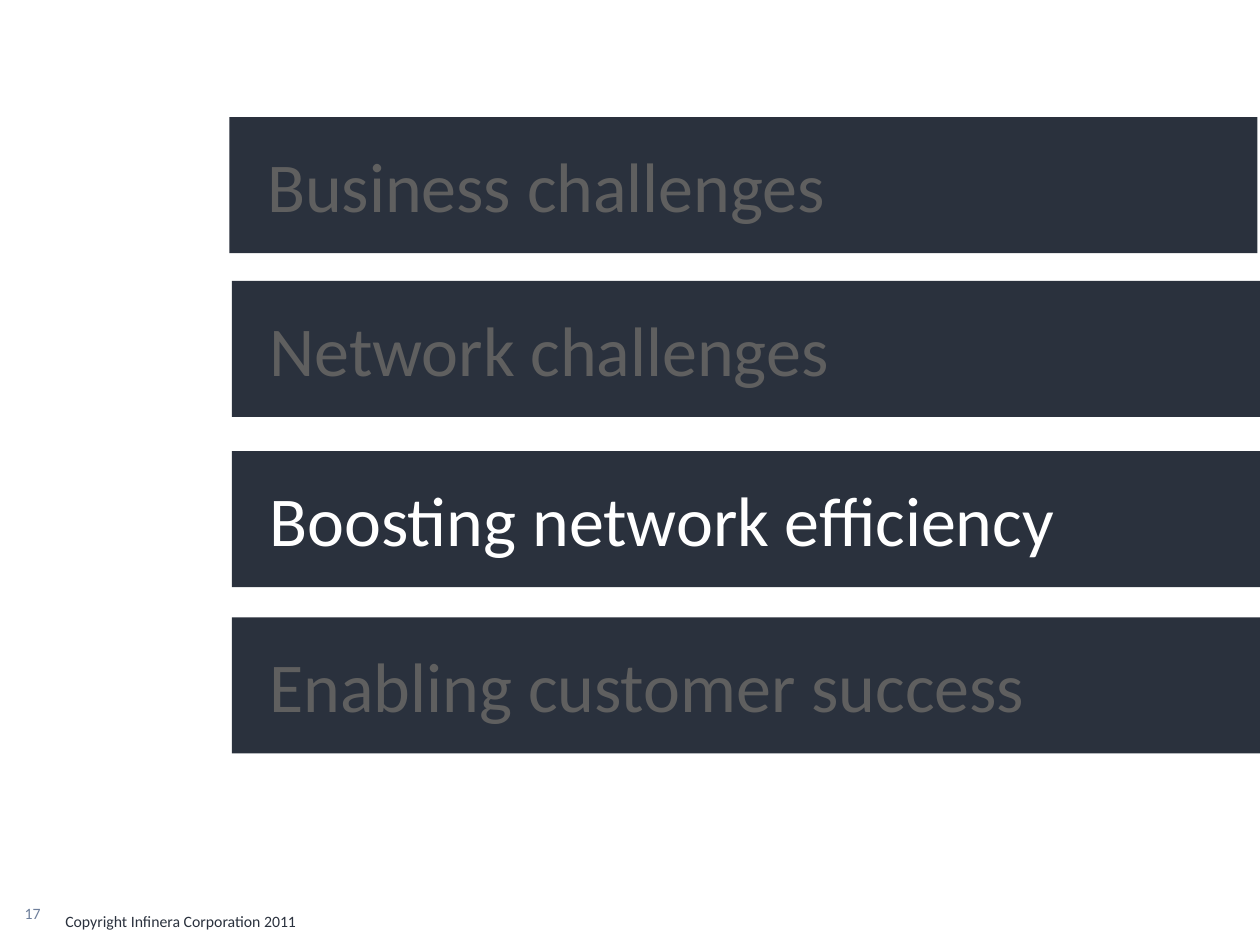
"""Build the agenda slide with the third topic highlighted."""
from pptx import Presentation
from pptx.dml.color import RGBColor
from pptx.enum.shapes import MSO_SHAPE as Shape
from pptx.enum.text import MSO_ANCHOR as Anchor, PP_ALIGN as Align
from pptx.util import Inches, Pt

NAVY = RGBColor(0x2A, 0x31, 0x3D)
GRAY = RGBColor(0x5F, 0x5F, 0x5F)
WHITE = RGBColor(0xFF, 0xFF, 0xFF)
SLATE = RGBColor(0x6E, 0x7F, 0x9B)


def put_text(shape, text, size, color, align, anchor):
    frame = shape.text_frame
    frame.word_wrap = True
    frame.vertical_anchor = anchor
    frame.text = text
    para = frame.paragraphs[0]
    para.alignment = align
    font = para.runs[0].font
    font.name = "Calibri"
    font.size = Pt(size)
    font.color.rgb = color


deck = Presentation()
deck.slide_width = Inches(10)
deck.slide_height = Inches(7.5)
slide = deck.slides.add_slide(deck.slide_layouts[6])

topics = [
    ("Business challenges", 1.82, 0.93, GRAY),
    ("Network challenges", 1.84, 2.23, GRAY),
    ("Boosting network efficiency", 1.84, 3.58, WHITE),
    ("Enabling customer success", 1.84, 4.9, GRAY),
]
for text, left, top, color in topics:
    bar = slide.shapes.add_shape(
        Shape.RECTANGLE, Inches(left), Inches(top), Inches(8.16), Inches(1.08))
    bar.shadow.inherit = False
    bar.fill.solid()
    bar.fill.fore_color.rgb = NAVY
    bar.line.fill.background()
    frame = bar.text_frame
    frame.margin_left = Inches(0.3)
    frame.margin_right = Inches(0.4)
    frame.margin_top = frame.margin_bottom = Inches(0.2)
    put_text(bar, text, 40, color, Align.LEFT, Anchor.TOP)

number = slide.shapes.add_textbox(
    Inches(0), Inches(7.12), Inches(0.42), Inches(0.25))
put_text(number, "17", 9, SLATE, Align.RIGHT, Anchor.MIDDLE)

footer = slide.shapes.add_textbox(
    Inches(0.42), Inches(7.19), Inches(4.57), Inches(0.3))
put_text(footer, "Copyright Infinera Corporation 2011", 9, NAVY,
         Align.LEFT, Anchor.TOP)

deck.save("out.pptx")
